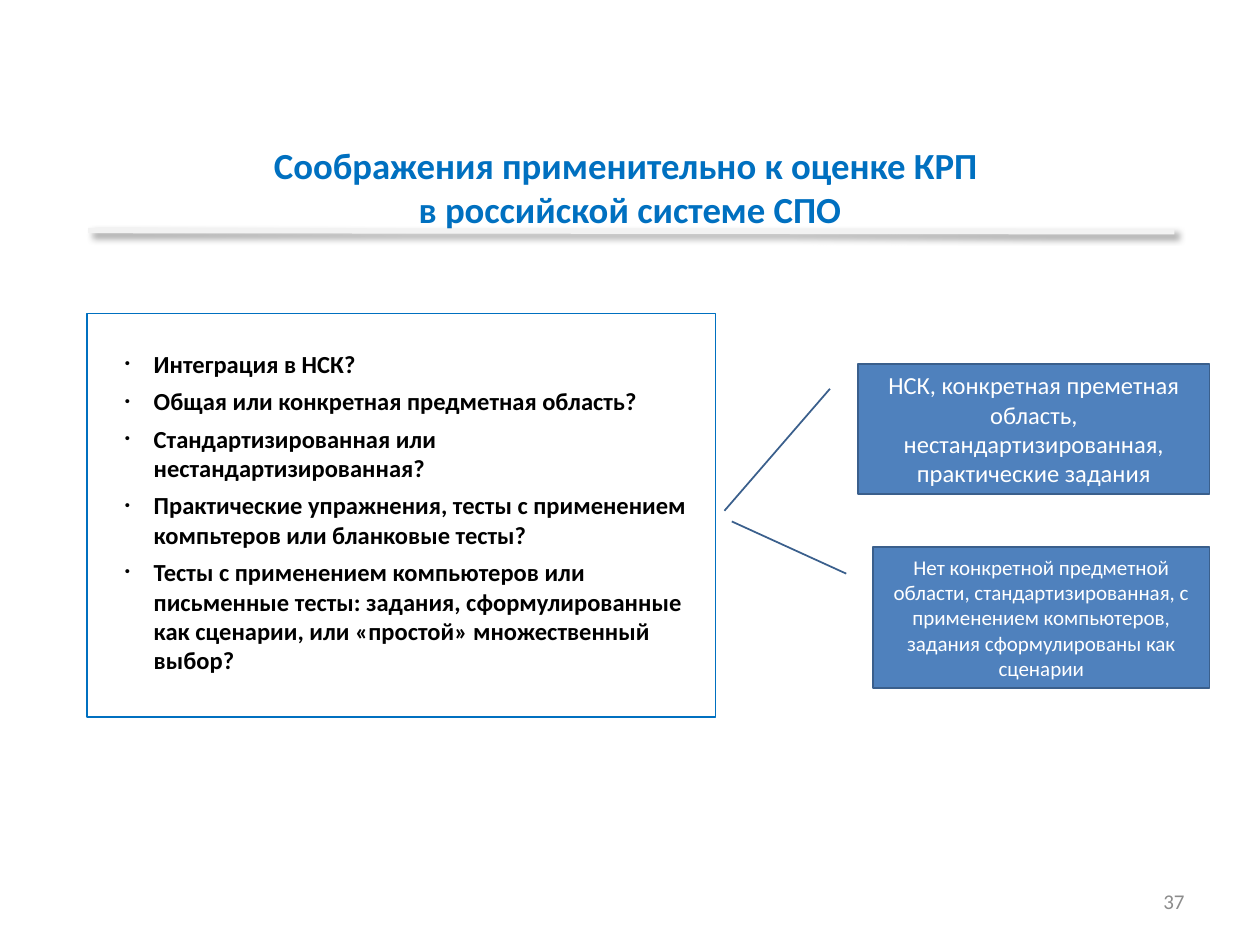
from lxml import etree
from pptx import Presentation
from pptx.dml.color import RGBColor
from pptx.enum.shapes import MSO_CONNECTOR, MSO_SHAPE
from pptx.enum.text import MSO_ANCHOR, MSO_AUTO_SIZE, PP_ALIGN
from pptx.oxml.ns import qn
from pptx.util import Inches, Pt

STRAIGHT = MSO_CONNECTOR.STRAIGHT
CALLOUT = MSO_SHAPE.LINE_CALLOUT_1
MIDDLE, TOP = MSO_ANCHOR.MIDDLE, MSO_ANCHOR.TOP
CENTER, LEFT, RIGHT = PP_ALIGN.CENTER, PP_ALIGN.LEFT, PP_ALIGN.RIGHT
NO_FIT = MSO_AUTO_SIZE.NONE

WIDTH, HEIGHT = 10, 7.5
MARGIN = 0.69
RIGHT_EDGE = 9.6
FONT = "Calibri"
BLUE, BLACK, WHITE, GRAY = "0070C0", "000000", "FFFFFF", "8C8C8C"
CALLOUT_FILL, CALLOUT_LINE, RULE_COLOR = "4F81BD", "3A5F8C", "F2F2F2"

TITLE = "Соображения применительно к оценке КРП \vв российской системе СПО"
QUESTIONS = [
    "Интеграция в НСК?",
    "Общая или конкретная предметная область?",
    "Стандартизированная или нестандартизированная?",
    "Практические упражнения, тесты с применением компьтеров или бланковые тесты?",
    "Тесты с применением компьютеров или письменные тесты: задания, "
    "сформулированные как сценарии, или «простой» множественный выбор?",
]
CALLOUTS = [
    ("НСК, конкретная преметная область, нестандартизированная, практические задания",
     6.81, 2.89, 1.03, 14, (0.19, -0.08, 1.13, -0.38)),
    ("Нет конкретной предметной области, стандартизированная, с применением "
     "компьютеров, задания сформулированы как сценарии",
     6.93, 4.34, 1.12, 12, (0.19, -0.08, -0.18, -0.42)),
]


def color(value):
    return RGBColor.from_string(value)


def place(shape, left, top, width, height):
    shape.left, shape.top = Inches(left), Inches(top)
    shape.width, shape.height = Inches(width), Inches(height)


def outline(shape, value, width):
    shape.line.color.rgb = color(value)
    shape.line.width = Pt(width)


def write(shape, text, size, value, align, anchor=MIDDLE, bold=False):
    frame = shape.text_frame
    frame.text = text
    frame.word_wrap = True
    frame.auto_size = NO_FIT
    frame.vertical_anchor = anchor
    for para in frame.paragraphs:
        para.alignment = align
        for span in para.runs:
            span.font.name = FONT
            span.font.size = Pt(size)
            span.font.bold = bold
            span.font.color.rgb = color(value)


def add_bullet(para):
    para.level = 2
    para.space_before = Pt(0)
    para.space_after = Pt(4.5)
    props = para._p.get_or_add_pPr()
    props.set("marL", str(Inches(0.43)))
    props.set("indent", str(Inches(-0.23)))
    bullet_color = etree.SubElement(props, qn("a:buClr"))
    etree.SubElement(bullet_color, qn("a:srgbClr"), val=BLACK)
    etree.SubElement(props, qn("a:buSzPct"), val="60000")
    etree.SubElement(props, qn("a:buFont"), typeface="Arial")
    etree.SubElement(props, qn("a:buChar"), char="•")


def add_title(page):
    title = page.shapes.title
    place(title, MARGIN, 0.94, WIDTH - 2 * MARGIN, 1.09)
    write(title, TITLE, 21, BLUE, CENTER, bold=True)


def add_rule(page):
    rule = page.shapes.add_connector(
        STRAIGHT, Inches(0.7), Inches(1.83), Inches(9.32), Inches(1.84))
    outline(rule, RULE_COLOR, 3)
    effects = etree.SubElement(rule._element.spPr, qn("a:effectLst"))
    shadow = etree.SubElement(
        effects, qn("a:outerShdw"), blurRad=str(Pt(4)), dist=str(Pt(3)),
        dir=str(45 * 60000), algn="tl", rotWithShape="0")
    shade = etree.SubElement(shadow, qn("a:srgbClr"), val=BLACK)
    etree.SubElement(shade, qn("a:alpha"), val="40000")


def add_questions(page):
    body = page.placeholders[1]
    place(body, MARGIN, 2.49, 4.99, 3.2)
    outline(body, BLUE, 0.75)
    write(body, "\n".join(QUESTIONS), 14, BLACK, LEFT, TOP, True)
    body.text_frame.margin_top = Inches(0.28)
    for para in body.text_frame.paragraphs:
        add_bullet(para)


def add_callout(page, text, left, top, height, size, pointer):
    box = page.shapes.add_shape(
        CALLOUT, Inches(left), Inches(top), Inches(RIGHT_EDGE - left), Inches(height))
    for index, share in enumerate(pointer):
        box.adjustments[index] = share
    box.shadow.inherit = False
    box.fill.solid()
    box.fill.fore_color.rgb = color(CALLOUT_FILL)
    outline(box, CALLOUT_LINE, 1)
    write(box, text, size, WHITE, CENTER)


def add_page_number(page):
    box = page.shapes.add_textbox(
        Inches(7.17), Inches(6.95), Inches(2.33), Inches(0.4))
    write(box, "37", 12, GRAY, RIGHT)


def main():
    deck = Presentation()
    deck.slide_width, deck.slide_height = Inches(WIDTH), Inches(HEIGHT)
    page = deck.slides.add_slide(deck.slide_layouts[1])
    add_title(page)
    add_rule(page)
    add_questions(page)
    for callout in CALLOUTS:
        add_callout(page, *callout)
    add_page_number(page)
    deck.save("out.pptx")


if __name__ == "__main__":
    main()
